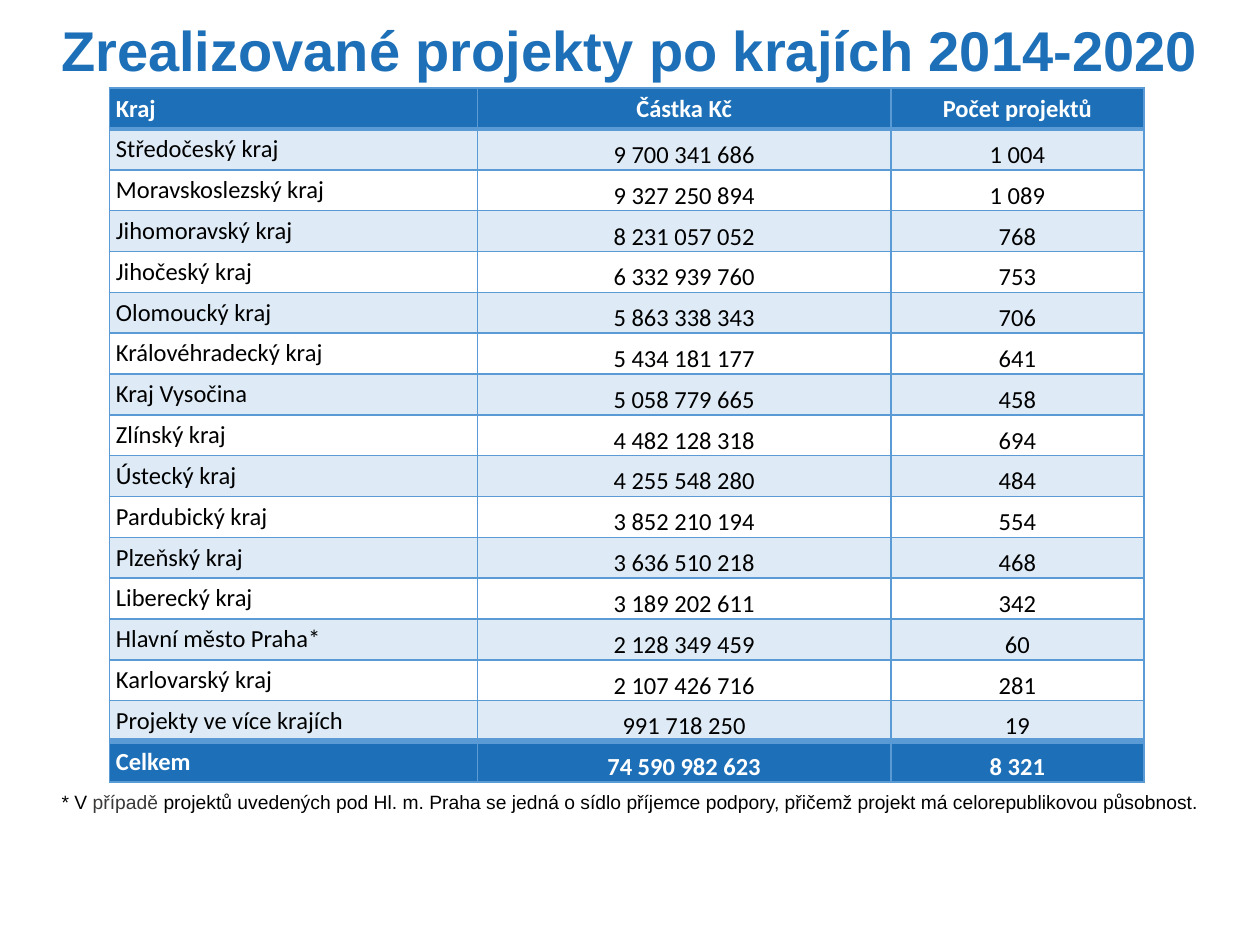
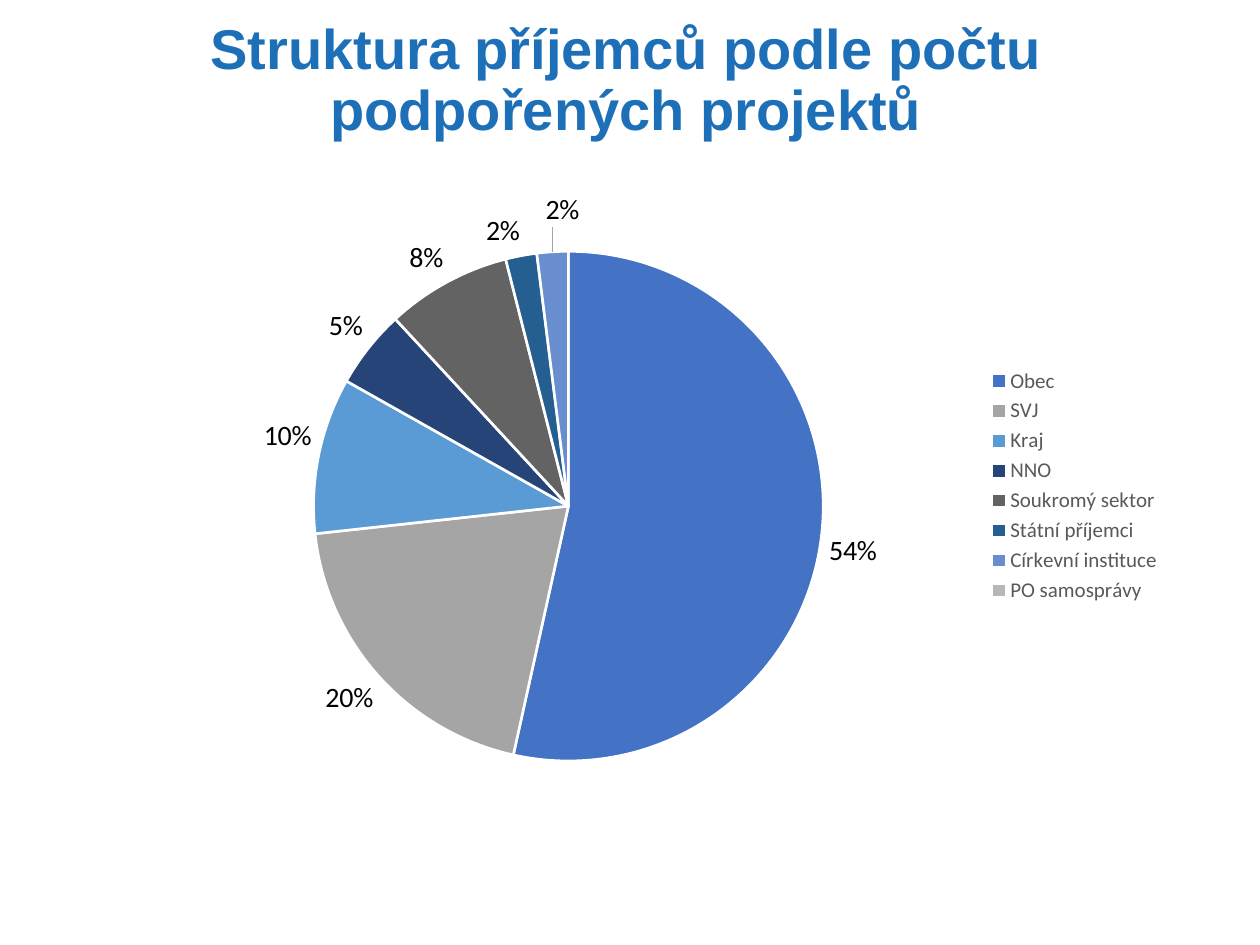
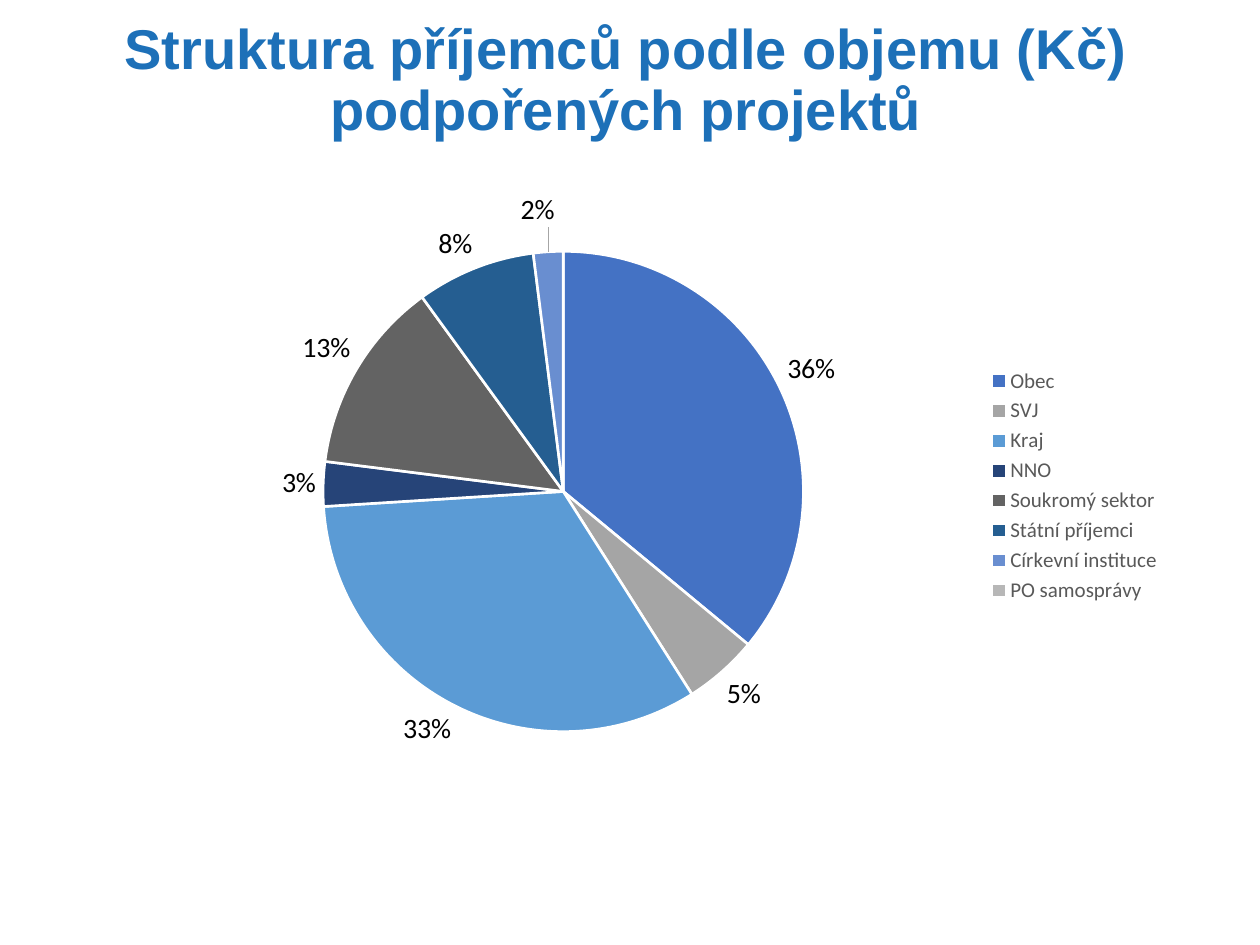
from dataclasses import dataclass

from lxml.etree import SubElement
from pptx import Presentation
from pptx.chart.data import CategoryChartData
from pptx.dml.color import RGBColor
from pptx.enum.chart import XL_CHART_TYPE, XL_LABEL_POSITION, XL_LEGEND_POSITION
from pptx.enum.text import MSO_ANCHOR, PP_ALIGN
from pptx.oxml import parse_xml
from pptx.oxml.ns import nsdecls, qn
from pptx.util import Inches, Pt


@dataclass(frozen=True)
class Theme:
    """Colours, fonts and type sizes of the deck."""
    blue: str = "1D70B8"
    sky: str = "5B9BD5"
    white: str = "FFFFFF"
    black: str = "000000"
    dark: str = "3B3838"
    grey: str = "595959"
    lead: str = "A6A6A6"
    pie: tuple = ("4472C4", "A5A5A5", "5B9BD5", "264478",
                  "636363", "255E91", "698ED0", "B7B7B7")
    head: str = "Arial"
    body: str = "Calibri"
    title: int = 32
    label: int = 16
    cell: int = 14
    key: int = 12
    note: int = 11
    base: int = 10


THEME = Theme()
COLS, ROWS = 100, 75
WIDE, HIGH = Inches(10), Inches(7.5)

TABLE = [
    ("Kraj", "Částka Kč", "Počet projektů"),
    ("Středočeský kraj", "9 700 341 686", "1 004"),
    ("Moravskoslezský kraj", "9 327 250 894", "1 089"),
    ("Jihomoravský kraj", "8 231 057 052", "768"),
    ("Jihočeský kraj", "6 332 939 760", "753"),
    ("Olomoucký kraj", "5 863 338 343", "706"),
    ("Královéhradecký kraj", "5 434 181 177", "641"),
    ("Kraj Vysočina", "5 058 779 665", "458"),
    ("Zlínský kraj", "4 482 128 318", "694"),
    ("Ústecký kraj", "4 255 548 280", "484"),
    ("Pardubický kraj", "3 852 210 194", "554"),
    ("Plzeňský kraj", "3 636 510 218", "468"),
    ("Liberecký kraj", "3 189 202 611", "342"),
    ("Hlavní město Praha*", "2 128 349 459", "60"),
    ("Karlovarský kraj", "2 107 426 716", "281"),
    ("Projekty ve více krajích", "991 718 250", "19"),
    ("Celkem", "74 590 982 623", "8 321"),
]
NOTE = [
    ("* V ", THEME.black),
    ("případě", THEME.dark),
    (" projektů uvedených pod Hl. m. Praha se jedná o sídlo příjemce podpory, "
     "přičemž projekt má celorepublikovou působnost.", THEME.black),
]
GROUPS = ["Obec", "SVJ", "Kraj", "NNO", "Soukromý sektor",
          "Státní příjemci", "Církevní instituce", "PO samosprávy"]
PIES = [
    ("Struktura příjemců podle počtu podpořených projektů",
     (0.54, 0.2, 0.1, 0.05, 0.08, 0.02, 0.02, 0),
     (0.16, 0.1, 0.5, 0.87), {6: (0.01, -0.03), 7: (0.04, -0.02)}),
    ("Struktura příjemců podle objemu (Kč) podpořených projektů",
     (0.36, 0.05, 0.33, 0.03, 0.13, 0.08, 0.02, 0),
     (0.17, 0.1, 0.47, 0.82), {6: (-0.01, -0.03), 7: (0.04, -0.02)}),
]


def grid(left, top, width, height):
    """Turn grid columns and rows into slide lengths."""
    return (int(WIDE * left / COLS), int(HIGH * top / ROWS),
            int(WIDE * width / COLS), int(HIGH * height / ROWS))


def style(font, face, size, tone, bold=False):
    """Set face, size, colour and weight of a font."""
    font.name, font.size, font.bold = face, Pt(size), bold
    font.color.rgb = RGBColor.from_string(tone)


def add_title(slide, box, text):
    """Add the centred blue title, set on the foot of its box."""
    frame = slide.shapes.add_textbox(*box).text_frame
    frame.word_wrap = True
    frame.vertical_anchor = MSO_ANCHOR.BOTTOM
    frame.text = text
    line = frame.paragraphs[0]
    line.alignment, line.line_spacing = PP_ALIGN.CENTER, 0.9
    style(line.runs[0].font, THEME.head, THEME.title, THEME.blue, True)


def add_note(slide, box, parts):
    """Add a footnote made of coloured runs."""
    frame = slide.shapes.add_textbox(*box).text_frame
    frame.word_wrap = True
    for text, tone in parts:
        run = frame.paragraphs[0].add_run()
        run.text = text
        style(run.font, THEME.head, THEME.note, tone)


def add_edges(cell, top, foot):
    """Draw the four borders of a cell."""
    props = cell._tc.get_or_add_tcPr()
    for side, width in zip("LRTB", (1, 1, top, foot)):
        props.append(parse_xml(
            f'<a:ln{side} {nsdecls("a")} w="{Pt(width)}"><a:solidFill>'
            f'<a:srgbClr val="{THEME.sky}"/></a:solidFill></a:ln{side}>'))


def paint(cell, tone, alpha=None):
    """Fill a cell, with an optional opacity in percent."""
    cell.fill.solid()
    cell.fill.fore_color.rgb = RGBColor.from_string(tone)
    if alpha:
        color = cell._tc.tcPr.find(qn("a:solidFill")).find(qn("a:srgbClr"))
        SubElement(color, qn("a:alpha"), val=str(alpha * 1000))


def fill_cell(cell, text, row, col):
    """Write and format one cell by its place in the table."""
    last = len(TABLE) - 1
    strong = row in (0, last)
    add_edges(cell, {1: 2, last: 4}.get(row, 1), {0: 2, last - 1: 4}.get(row, 1))
    if strong:
        paint(cell, THEME.blue)
    elif row % 2:
        paint(cell, THEME.sky, 20)
    else:
        cell.fill.background()
    low = row > 0 and col > 0
    cell.vertical_anchor = MSO_ANCHOR.BOTTOM if low else MSO_ANCHOR.MIDDLE
    cell.margin_left = cell.margin_right = Inches(0.01 if low else 0.05)
    cell.margin_top, cell.margin_bottom = Inches(0.01 if low else 0), 0
    cell.text = text
    line = cell.text_frame.paragraphs[0]
    line.alignment = PP_ALIGN.CENTER if col else PP_ALIGN.LEFT
    style(line.runs[0].font, THEME.body, THEME.cell,
          THEME.white if strong else THEME.black, strong)


def add_grid(slide, box, data, shares):
    """Add the table of regions with columns given as shares."""
    table = slide.shapes.add_table(len(data), len(shares), *box).table
    for col, share in zip(table.columns, shares):
        col.width = int(box[2] * share / sum(shares))
    for row, texts in enumerate(data):
        table.rows[row].height = int(box[3] / len(data))
        for col, text in enumerate(texts):
            fill_cell(table.cell(row, col), text, row, col)


def layout(target="", **parts):
    """Build a manual chart layout from shares of the chart."""
    inner = f'<c:layoutTarget val="{target}"/>' if target else ""
    if target:
        inner += '<c:xMode val="edge"/><c:yMode val="edge"/>'
    inner += "".join(f'<c:{key} val="{val}"/>' for key, val in parts.items())
    return parse_xml(f'<c:layout {nsdecls("c")}><c:manualLayout>{inner}'
                     '</c:manualLayout></c:layout>')


def add_labels(series, shifts):
    """Label the slices and move the crowded labels outwards."""
    labels = series.data_labels
    labels.show_value, labels.show_percentage = True, False
    labels.number_format, labels.number_format_is_linked = "0%", False
    labels.position = XL_LABEL_POSITION.OUTSIDE_END
    style(labels.font, THEME.body, THEME.label, THEME.black)
    for spot, (across, down) in shifts.items():
        label = series.points[spot].data_label
        style(label.font, THEME.body, THEME.label, THEME.black)
        label.position = XL_LABEL_POSITION.OUTSIDE_END
        node = labels._element.find(f'{qn("c:dLbl")}[{spot - min(shifts) + 1}]')
        node.insert(1, layout(x=across, y=down))
        node.insert(2, parse_xml(f'<c:numFmt {nsdecls("c")} formatCode="0%" '
                                 'sourceLinked="0"/>'))
    labels._element.append(parse_xml(
        f'<c:leaderLines {nsdecls("c", "a")}><c:spPr><a:ln w="{Pt(0.75)}">'
        f'<a:solidFill><a:srgbClr val="{THEME.lead}"/></a:solidFill></a:ln>'
        '</c:spPr></c:leaderLines>'))


def add_pie(slide, box, values, plot, shifts):
    """Add a pie of recipients with its legend on the right."""
    data = CategoryChartData(number_format="0%")
    data.categories = GROUPS
    data.add_series("Series 1", values)
    chart = slide.shapes.add_chart(XL_CHART_TYPE.PIE, *box, data).chart
    chart.has_title = False
    style(chart.font, THEME.body, THEME.base, THEME.black)
    chart.has_legend = True
    chart.legend.position = XL_LEGEND_POSITION.RIGHT
    chart.legend.include_in_layout = False
    style(chart.legend.font, THEME.body, THEME.key, THEME.grey)
    chart.plots[0].vary_by_categories = True
    series = chart.plots[0].series[0]
    for spot, tone in enumerate(THEME.pie):
        form = series.points[spot].format
        form.fill.solid()
        form.fill.fore_color.rgb = RGBColor.from_string(tone)
        form.line.color.rgb = RGBColor.from_string(THEME.white)
        form.line.width = Pt(1.5)
    add_labels(series, shifts)
    area = chart._chartSpace.chart.plotArea
    for old in area.findall(qn("c:layout")):
        area.remove(old)
    area.insert(0, layout("inner", **dict(zip("xywh", plot))))


def table_slide(deck):
    """Build the slide of projects by region."""
    slide = deck.slides.add_slide(deck.slide_layouts[6])
    add_title(slide, grid(0, -1.6, 100, 8.7),
              "Zrealizované projekty po krajích 2014-2020")
    add_note(slide, grid(3.9, 62.2, 92.7, 2.9), NOTE)
    add_grid(slide, grid(8.7, 7, 82.1, 55.1), TABLE, (2.92, 3.28, 2.01))


def pie_slide(deck, title, values, plot, shifts):
    """Build one slide with a pie of recipients."""
    slide = deck.slides.add_slide(deck.slide_layouts[6])
    add_title(slide, grid(4.8, 3.1, 89.8, 8.7), title)
    add_pie(slide, grid(11.7, 15.3, 81.5, 46.5), values, plot, shifts)


def main():
    """Build and save the deck."""
    deck = Presentation()
    deck.slide_width, deck.slide_height = WIDE, HIGH
    table_slide(deck)
    for pie in PIES:
        pie_slide(deck, *pie)
    deck.save("out.pptx")


if __name__ == "__main__":
    main()
